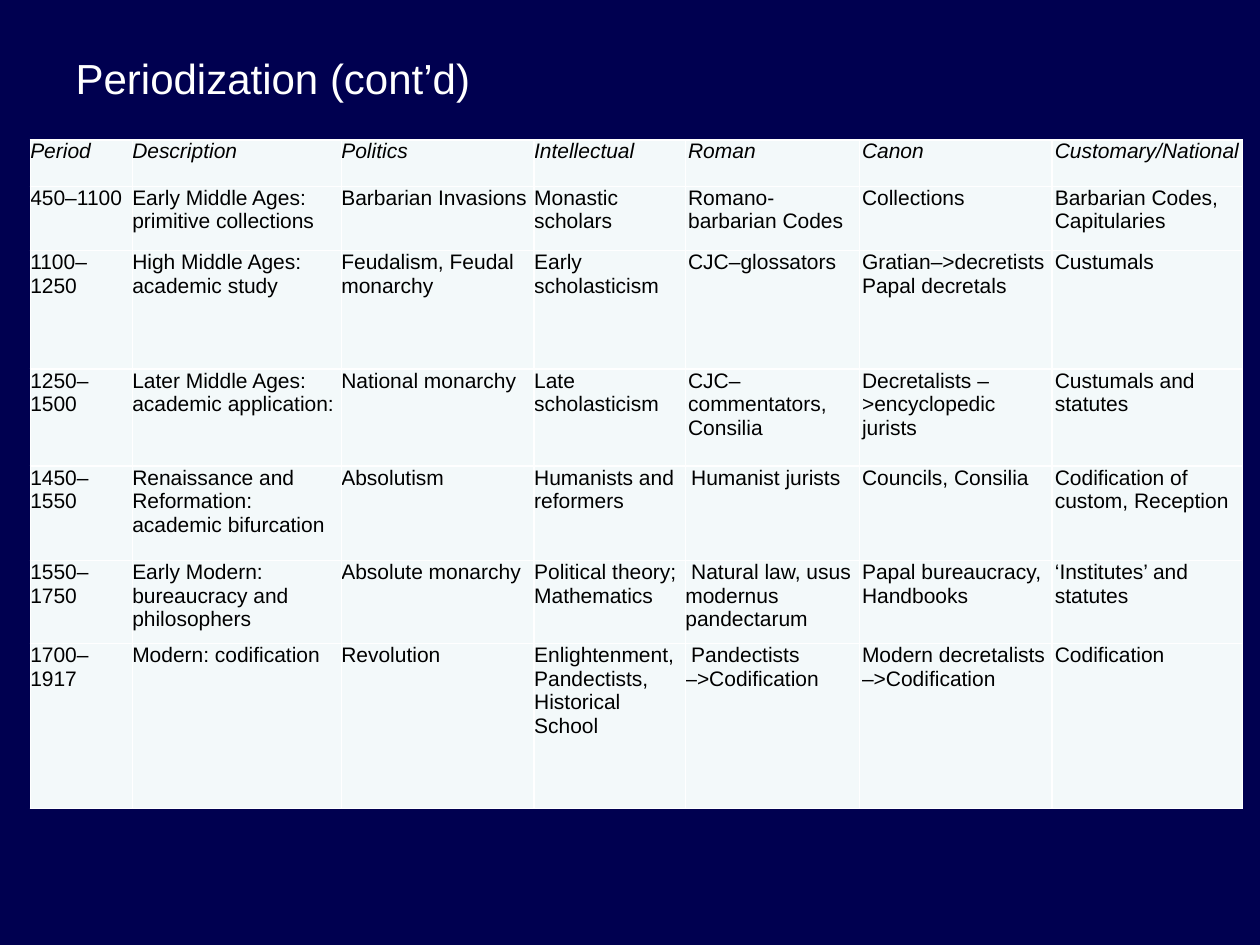
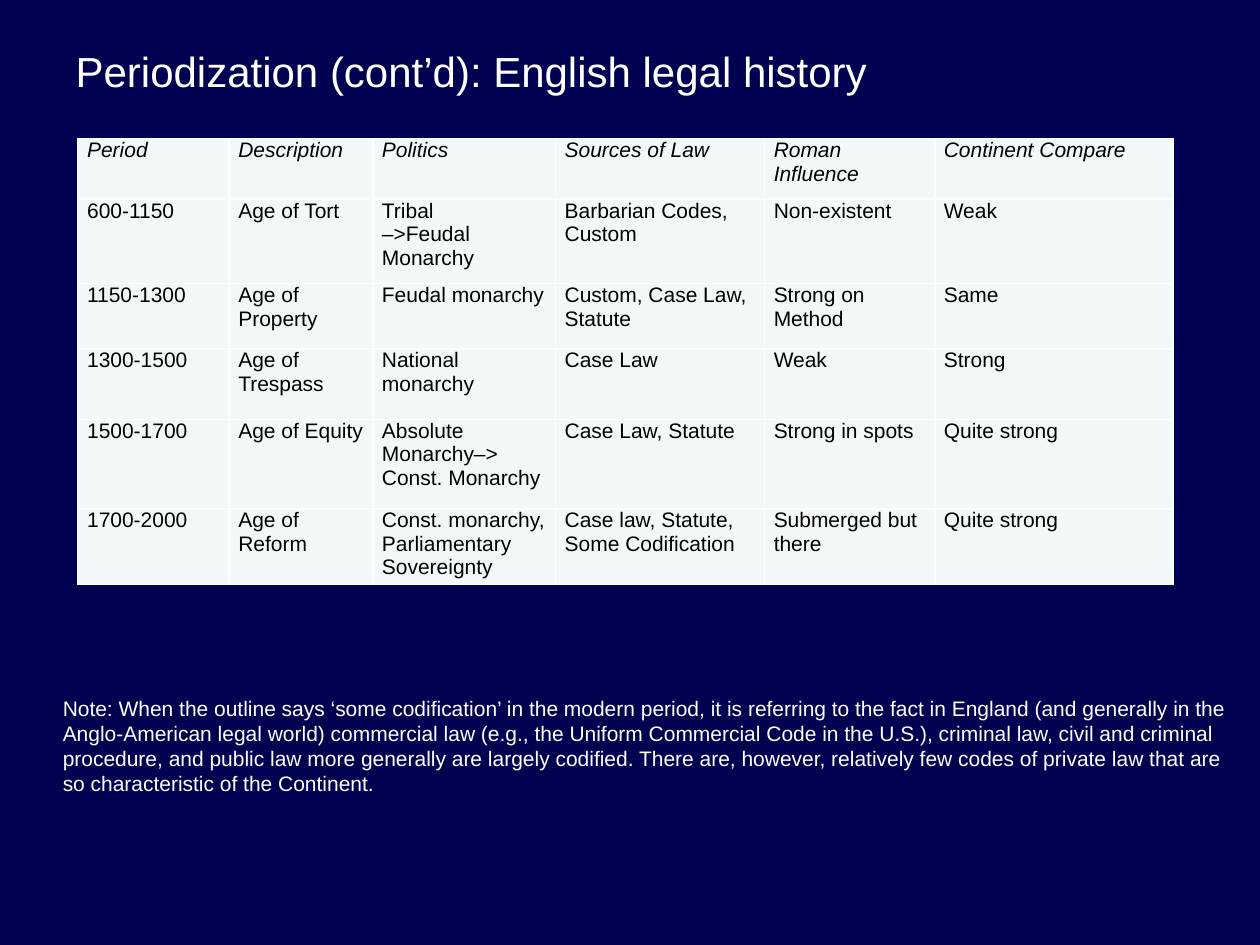
from copy import deepcopy

from lxml.etree import SubElement
from pptx import Presentation
from pptx.dml.color import RGBColor as Rgb
from pptx.enum.text import MSO_ANCHOR as Anchor, MSO_AUTO_SIZE as AutoSize, PP_ALIGN as Align
from pptx.oxml.ns import qn
from pptx.util import Pt

COLOURS = {"navy": "000050", "white": "FFFFFF", "cell": "F3F9FA", "ink": "000000"}
TITLE_FORMAT = {"name": "Arial", "size": Pt(24), "bold": False}
BODY_FORMAT = {"name": "Arial", "size": Pt(12), "bold": False}

CONTINENT = {
    "title": "Periodization (cont’d)",
    "title_box": (36, 26.6, 684, 33.8),
    "table_at": (17.3, 79.9),
    "columns": [58.3, 119.5, 110.2, 86.4, 99.4, 110.2, 108.7],
    "heights": [26.6, 36.7, 67.7, 55.4, 54, 47.5, 94.3],
    "inset": lambda row, column: 1.6 if column > 4 or (column == 4 and row < 4) else 0,
    "periods": [
        ("Period", "Description", "Politics", "Intellectual", "Roman", "Canon",
         "Customary/National"),
        ("450–1100", "Early Middle Ages: primitive collections", "Barbarian Invasions",
         "Monastic scholars", "Romano-barbarian Codes", "Collections",
         "Barbarian Codes,\nCapitularies"),
        ("1100–1250", "High Middle Ages: academic study", "Feudalism, Feudal monarchy",
         "Early scholasticism", "CJC–glossators", "Gratian–>decretists Papal decretals",
         "Custumals"),
        ("1250–1500", "Later Middle Ages: academic application:", "National monarchy",
         "Late scholasticism", "CJC–commentators, Consilia",
         "Decretalists –>encyclopedic jurists", "Custumals and statutes"),
        ("1450–1550", "Renaissance and Reformation: academic bifurcation", "Absolutism",
         "Humanists and reformers", " Humanist jurists", "Councils, Consilia",
         "Codification of custom, Reception"),
        ("1550–1750", "Early Modern: bureaucracy and philosophers", "Absolute monarchy",
         "Political theory; Mathematics", " Natural law, usus modernus pandectarum",
         "Papal bureaucracy, Handbooks", "‘Institutes’ and statutes"),
        ("1700–1917", "Modern: codification", "Revolution",
         "Enlightenment, Pandectists, Historical School", " Pandectists\n–>Codification",
         "Modern decretalists\n–>Codification", "Codification"),
    ],
}

ENGLAND = {
    "title": "Periodization (cont’d): English legal history",
    "title_box": (36, 22.3, 684, 39.6),
    "table_at": (44.6, 79.2),
    "columns": [86.4, 82.1, 104.4, 119.5, 97.2, 136.1],
    "heights": [34.6, 48.2, 37.4, 40.3, 51.1, 23],
    "inset": lambda row, column: 5.2,
    "periods": [
        ("Period", "Description", "Politics", "Sources of Law", "Roman Influence",
         "Continent Compare"),
        ("600-1150", "Age of Tort", "Tribal\n–>Feudal Monarchy", "Barbarian Codes, Custom",
         "Non-existent", "Weak"),
        ("1150-1300", "Age of Property", "Feudal monarchy", "Custom, Case Law, Statute",
         "Strong on Method", "Same"),
        ("1300-1500", "Age of Trespass", "National monarchy", "Case Law", "Weak", "Strong"),
        ("1500-1700", "Age of Equity", "Absolute Monarchy–> Const. Monarchy",
         "Case Law, Statute", "Strong in spots", "Quite strong"),
        ("1700-2000", "Age of Reform", "Const. monarchy, Parliamentary Sovereignty",
         "Case law, Statute, Some Codification", "Submerged but there", "Quite strong"),
    ],
    "note": "Note: When the outline says ‘some codification’ in the modern period, it is "
            "referring to the fact in England (and generally in the Anglo-American legal world) "
            "commercial law (e.g., the Uniform Commercial Code in the U.S.), criminal law, civil "
            "and criminal procedure, and public law more generally are largely codified. There "
            "are, however, relatively few codes of private law that are so characteristic of the "
            "Continent.",
    "note_box": (28.8, 393.8, 684, 65.5),
}


def colour(name):
    return Rgb.from_string(COLOURS[name])


def apply(target, values):
    for key, value in values.items():
        setattr(target, key, value)


def place(shape, box):
    apply(shape, dict(zip(("left", "top", "width", "height"), map(Pt, box))))


def write(frame, text, values, tint):
    paragraph = frame.paragraphs[0]
    paragraph.text = text
    paragraph.alignment = Align.LEFT
    for run in paragraph.runs:
        apply(run.font, values)
        run.font.color.rgb = colour(tint)
    for line_break in paragraph._p.findall(qn("a:br")):
        line_break.insert(0, deepcopy(paragraph.runs[0].font._element))
    return paragraph


def draw_borders(cell):
    properties = cell._tc.get_or_add_tcPr()
    for position, side in enumerate(("lnL", "lnR", "lnT", "lnB")):
        border = SubElement(properties, qn(f"a:{side}"), w=str(Pt(1)))
        fill = SubElement(border, qn("a:solidFill"))
        SubElement(fill, qn("a:srgbClr"), val=COLOURS["white"])
        properties.insert(position, border)


def add_periods(slide, content):
    columns, heights = content["columns"], content["heights"]
    box = (*content["table_at"], sum(columns), sum(heights))
    table = slide.shapes.add_table(len(heights), len(columns), *map(Pt, box)).table
    apply(table, {"first_row": False, "horz_banding": False})
    for column, width in zip(table.columns, columns):
        column.width = Pt(width)
    for row, height in zip(table.rows, heights):
        row.height = Pt(height)
    for r, period in enumerate(content["periods"]):
        for c, text in enumerate(period):
            cell = table.cell(r, c)
            side = Pt(content["inset"](r, c))
            apply(cell, {"margin_left": side, "margin_right": side,
                         "margin_top": 0, "margin_bottom": 0})
            cell.fill.solid()
            cell.fill.fore_color.rgb = colour("cell")
            draw_borders(cell)
            paragraph = write(cell.text_frame, text, {**BODY_FORMAT, "italic": r == 0}, "ink")
            paragraph.space_after = Pt(5)


def add_slide(deck, content):
    slide = deck.slides.add_slide(deck.slide_layouts[5])
    title = slide.shapes.title
    place(title, content["title_box"])
    apply(title.text_frame, {"vertical_anchor": Anchor.TOP, "auto_size": AutoSize.NONE,
                             "word_wrap": True})
    write(title.text_frame, content["title"], TITLE_FORMAT, "white")
    if "note" in content:
        note = slide.shapes.add_textbox(*map(Pt, content["note_box"])).text_frame
        apply(note, {"word_wrap": True, "auto_size": AutoSize.SHAPE_TO_FIT_TEXT})
        write(note, content["note"], BODY_FORMAT, "white")
    add_periods(slide, content)


def main():
    deck = Presentation()
    apply(deck, {"slide_width": Pt(720), "slide_height": Pt(540)})
    backdrop = deck.slide_master.background.fill
    backdrop.solid()
    backdrop.fore_color.rgb = colour("navy")
    for content in (CONTINENT, ENGLAND):
        add_slide(deck, content)
    deck.save("out.pptx")


if __name__ == "__main__":
    main()
